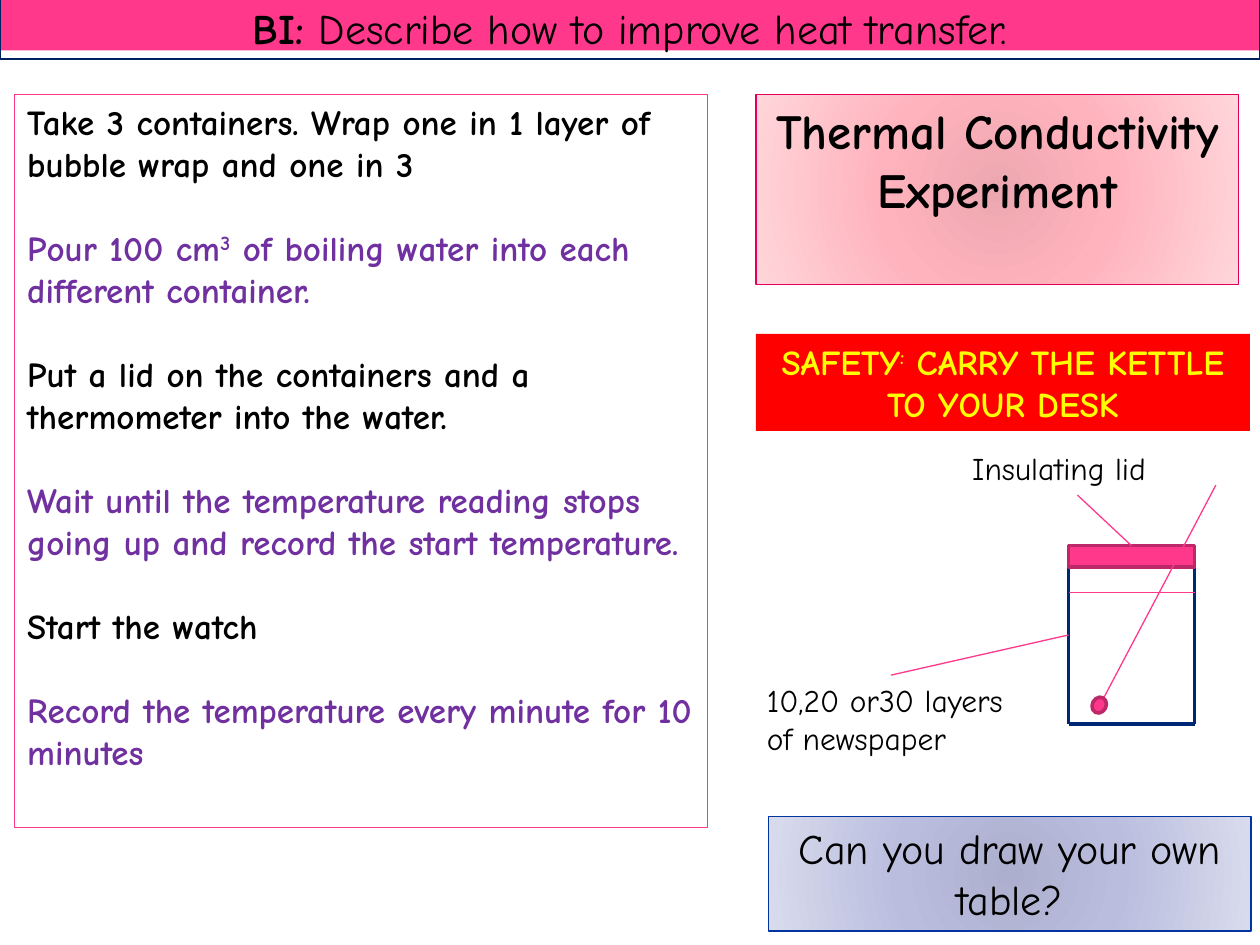
from lxml.etree import SubElement
from pptx import Presentation
from pptx.dml.color import RGBColor
from pptx.enum.shapes import MSO_CONNECTOR, MSO_SHAPE
from pptx.enum.text import MSO_ANCHOR, PP_ALIGN
from pptx.oxml.ns import qn
from pptx.util import Cm, Pt

PINK, ROSE, NAVY = "FF388C", "BD2968", "002776"
BLACK, PURPLE = "000000", "7030A0"
FRAME = {"word_wrap": True, "vertical_anchor": MSO_ANCHOR.TOP}
STEPS = [
    [("Take 3 containers. Wrap one in 1 layer of bubble wrap and one in 3",)],
    [("Pour 100 cm",), ("3", {"raised": True}),
     (" of boiling water into each different container.",)],
    [("Put a lid on the containers and a thermometer into the water.",)],
    [("Wait until the temperature reading stops going up and record "
      "the start temperature.",)],
    [("Start the watch",)],
    [("Record the temperature every minute for 10 minutes",)],
]


def color(code):
    return RGBColor.from_string(code)


def apply(target, values):
    for name, value in values.items():
        setattr(target, name, value)


def box(slide, at, fill=None, line=None, width=0.75, kind=MSO_SHAPE.RECTANGLE):
    shape = slide.shapes.add_shape(kind, *map(Cm, at))
    shape.shadow.inherit = False
    if fill:
        shape.fill.solid()
        shape.fill.fore_color.rgb = color(fill)
    else:
        shape.fill.background()
    if line:
        shape.line.color.rgb = color(line)
        shape.line.width = Pt(width)
    else:
        shape.line.fill.background()
    return shape


def glow(shape, stops):
    shape.fill.gradient()
    grad = shape.fill._xPr.find(qn("a:gradFill"))
    for child in list(grad):
        grad.remove(child)
    items = SubElement(grad, qn("a:gsLst"))
    for place, code in zip((0, 45, 100), stops):
        stop = SubElement(items, qn("a:gs"), pos=str(place * 1000))
        SubElement(stop, qn("a:srgbClr"), val=code)
    round_ = SubElement(grad, qn("a:path"), path="circle")
    SubElement(round_, qn("a:fillToRect"), l="50000", t="50000", r="50000", b="50000")


def write(para, runs, size, code=BLACK, bold=False, align=PP_ALIGN.LEFT, after=0):
    apply(para, {"alignment": align, "space_after": Pt(after)})
    for text, *extra in runs:
        style = {"bold": bold, **(extra[0] if extra else {})}
        raised = style.pop("raised", False)
        run = para.add_run()
        run.text = text
        apply(run.font, {"name": "Comic Neue", "size": Pt(size), **style})
        run.font.color.rgb = color(code)
        if raised:
            run.font._element.set("baseline", "30000")


def center(shape, runs, size, code=BLACK, bold=False):
    apply(shape.text_frame, FRAME)
    write(shape.text_frame.paragraphs[0], runs, size, code, bold, PP_ALIGN.CENTER)


def label(slide, at, text):
    frame = slide.shapes.add_textbox(*map(Cm, at)).text_frame
    apply(frame, FRAME)
    write(frame.paragraphs[0], [(text,)], 18)


def line(slide, start, end, code=PINK, width=0.75):
    link = slide.shapes.add_connector(MSO_CONNECTOR.STRAIGHT, *map(Cm, start + end))
    link.line.color.rgb = color(code)
    link.line.width = Pt(width)
    SubElement(link._element.spPr, qn("a:effectLst"))
    return link


def steps(slide):
    frame = box(slide, (0.3, 1.9, 13.97, 14.78), line=PINK).text_frame
    apply(frame, FRAME)
    for index, runs in enumerate(STEPS):
        para = frame.add_paragraph() if index else frame.paragraphs[0]
        write(para, runs, 20, (BLACK, PURPLE)[index % 2], True, after=24)


def beaker(slide):
    left, right, top, base = 21.54, 24.08, 11, 14.6
    corners = [(left, top), (left, base), (right, base), (right, top)]
    for start, end in zip(corners, corners[1:]):
        line(slide, start, end, NAVY, 2.25)
    lid = box(slide, (left, top, right - left, 0.43), PINK, ROSE, 2.08)
    line(slide, (24.51, 9.78), (22.17, 14.22))
    bulb = box(slide, (22.02, 14.05, 0.28, 0.33), PINK, ROSE, 2.08, MSO_SHAPE.OVAL)
    bulb.rotation = 26.8
    line(slide, (left, 11.94), (right, 11.94))
    line(slide, (left, (top + base) / 2), (17.96, 13.61))
    line(slide, (22.81, top), (21.72, 9.98)).begin_connect(lid, 0)
    label(slide, (15.21, 13.61, 5.51, 2.57), "10,20 or30 layers of newspaper")
    label(slide, (19.35, 8.92, 4.72, 1.07), "Insulating lid")


def main():
    deck = Presentation()
    apply(deck, {"slide_width": Cm(25.4), "slide_height": Cm(19.05)})
    slide = deck.slides.add_slide(deck.slide_layouts[6])

    box(slide, (0, 0, 25.4, 1.02), PINK)
    head = box(slide, (0, -0.08, 25.4, 1.27), line="002060")
    center(head, [("BI: ", {"bold": True}),
                  ("Describe how to improve heat transfer.",)], 24)

    title = box(slide, (15.24, 1.9, 9.73, 3.84), line="E40059")
    glow(title, ("EDA7B0", "FFB3BD", "FFD6DB"))
    center(title, [("Thermal Conductivity Experiment",)], 28, bold=True)

    beaker(slide)
    steps(slide)

    alert = box(slide, (15.24, 6.73, 9.96, 1.96), "FF0000")
    center(alert, [("SAFETY",), (":", {"raised": True}),
                   (" CARRY THE KETTLE TO YOUR DESK",)], 20, "FFFF00", True)

    task = box(slide, (15.49, 16.46, 9.73, 2.31), line="00349E")
    glow(task, ("ACAFCD", "BABDDE", "D9DBED"))
    center(task, [("Can you draw your own table?",)], 24)
    deck.save("out.pptx")


if __name__ == "__main__":
    main()
